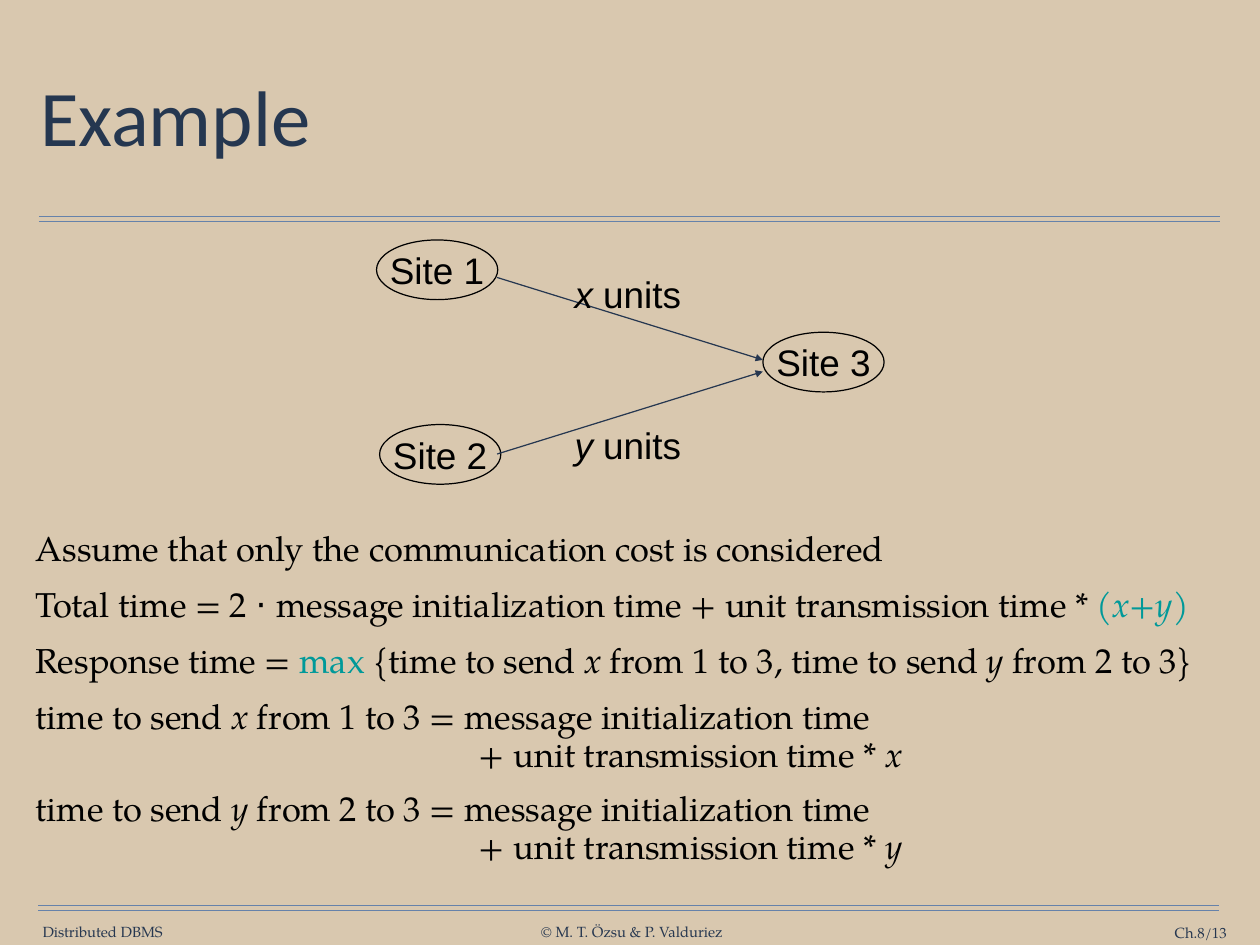
from lxml.etree import SubElement
from pptx import Presentation
from pptx.dml.color import RGBColor
from pptx.enum.shapes import MSO_CONNECTOR, MSO_SHAPE
from pptx.enum.text import MSO_ANCHOR, MSO_AUTO_SIZE, PP_ALIGN
from pptx.oxml.ns import qn
from pptx.util import Pt

COLORS = {name: RGBColor.from_string(value) for name, value in {
    "background": "D9C8AF", "rule": "6682AA", "title": "253750",
    "navy": "263750", "black": "000000", "teal": "009999",
}.items()}
SERIF = "TeX Gyre Pagella"

presentation = Presentation()
presentation.slide_width, presentation.slide_height = Pt(1024), Pt(768)
slide = presentation.slides.add_slide(presentation.slide_layouts[5])
slide.background.fill.solid()
slide.background.fill.fore_color.rgb = COLORS["background"]


def add_line(start, end, color):
    line = slide.shapes.add_connector(
        MSO_CONNECTOR.STRAIGHT, *[Pt(value) for value in (*start, *end)])
    line.line.color.rgb = COLORS[color]
    line.line.width = Pt(1)
    SubElement(line._element.spPr, qn("a:effectLst"))
    return line


def fill_text(shape, paragraphs, font, size, color, align=PP_ALIGN.LEFT,
              anchor=MSO_ANCHOR.MIDDLE, inset=0, wrap=False):
    """Each paragraph is a list of (text, changes to the run's font)."""
    frame = shape.text_frame
    frame.auto_size = MSO_AUTO_SIZE.NONE
    frame.word_wrap = wrap
    frame.vertical_anchor = anchor
    frame.margin_left = frame.margin_right = Pt(inset)
    frame.margin_top = frame.margin_bottom = Pt(inset)
    frame.text = "\n".join("" for _ in paragraphs)
    for paragraph, pieces in zip(frame.paragraphs, paragraphs):
        paragraph.alignment = align
        for text, changes in pieces:
            run = paragraph.add_run()
            run.text = text
            run.font.size = Pt(size)
            run.font.name = changes.get("font", font)
            run.font.italic = changes.get("italic", False)
            run.font.color.rgb = COLORS[changes.get("color", color)]


# Title and double rules
title = slide.shapes.title
title.left, title.top, title.width, title.height = Pt(28), Pt(35), Pt(968), Pt(127)
fill_text(title, [[("Example", {})]], "Calibri", 64, "title", inset=4.5, wrap=True)
title.text_frame.paragraphs[0].line_spacing = 0.9

for left, top in ((31.5, 175.75), (31, 735.75)):
    for offset in (0, 4.25):
        add_line((left, top + offset), (left + 960, top + offset), "rule")

# Footer
for text, left, top, width, align in (
    ("Distributed DBMS", 34, 749.5, 99, PP_ALIGN.CENTER),
    ("© M. T. Özsu & P. Valduriez", 438.5, 749.5, 150, PP_ALIGN.CENTER),
    ("Ch.8/13", 886, 751, 111, PP_ALIGN.RIGHT),
):
    box = slide.shapes.add_textbox(Pt(left), Pt(top), Pt(width), Pt(14.5))
    fill_text(box, [[(text, {})]], SERIF, 12, "navy", align)

# Sites, transfers and their labels
for name, left, top in (("Site 1", 306, 195), ("Site 2", 308.5, 345), ("Site 3", 620, 270)):
    site = slide.shapes.add_shape(MSO_SHAPE.OVAL, Pt(left), Pt(top), Pt(98.5), Pt(48.5))
    site.shadow.inherit = False
    site.fill.background()
    site.line.color.rgb = COLORS["black"]
    site.line.width = Pt(1)
    fill_text(site, [[(name, {})]], "Arial", 30, "black", PP_ALIGN.CENTER)

for variable, start_y, end_y, label_top in (("x", 225.5, 292.5, 215.5), ("y", 369, 302, 338.5)):
    arrow = add_line((404, start_y), (620, end_y), "navy")
    SubElement(arrow.line._get_or_add_ln(), qn("a:tailEnd"), type="triangle")
    label = slide.shapes.add_textbox(Pt(455.5), Pt(label_top), Pt(109.5), Pt(46))
    fill_text(label, [[(variable, {"italic": True}), (" units", {})]],
              "Arial", 30, "black", PP_ALIGN.CENTER)

# Cost formulas
x, y = ("x", {"italic": True}), ("y", {"italic": True})
formulas = [
    [("Assume that only the communication cost is considered", {})],
    [("Total time = 2 ", {}), ("⋅ ", {"font": "Arial"}),
     ("message initialization time + unit transmission time * ", {}),
     ("(", {"color": "teal"}), ("x+y", {"color": "teal", "italic": True}),
     (")", {"color": "teal"})],
    [("Response time = ", {}), ("max", {"color": "teal"}), (" {time to send ", {}), x,
     (" from 1 to 3, time to send ", {}), y, (" from 2 to 3}", {})],
]
for variable, source in ((x, 1), (y, 2)):
    formulas.append([("time to send ", {}), variable,
                     (f" from {source} to 3 = message initialization time", {})])
    formulas.append([("+ unit transmission time * ", {}), variable])

body = slide.shapes.add_textbox(Pt(24.5), Pt(423.5), Pt(968), Pt(300))
fill_text(body, formulas, SERIF, 28, "black", anchor=MSO_ANCHOR.TOP, inset=4.5, wrap=True)
for index, paragraph in enumerate(body.text_frame.paragraphs):
    if index > 0:
        paragraph.space_before = Pt(12)
    if index in (4, 6):  # continuation lines
        paragraph.line_spacing = 0.5
        paragraph._p.get_or_add_pPr().set("marL", str(Pt(360)))

presentation.save("out.pptx")
